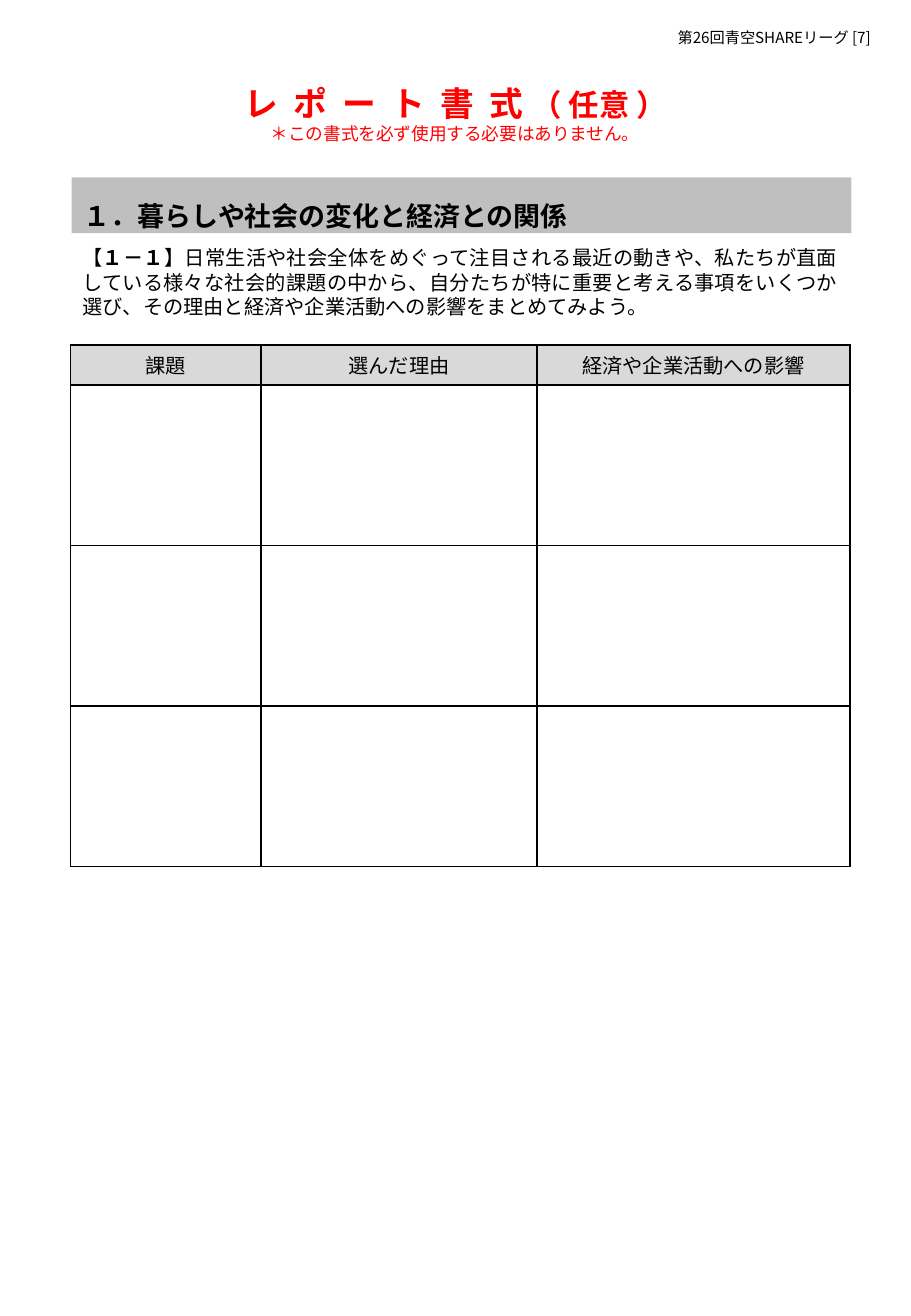
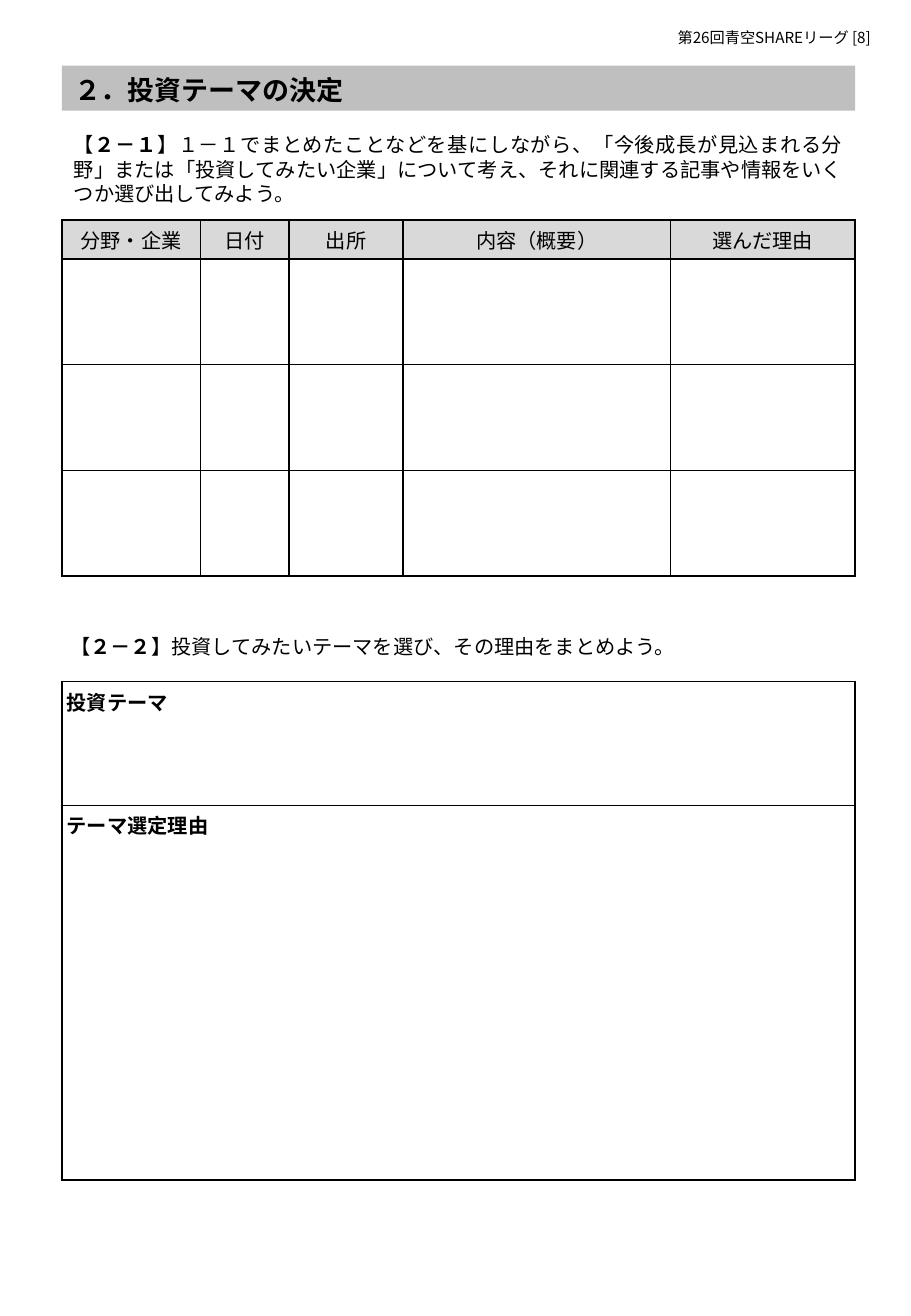
from pptx import Presentation
from pptx.dml.color import RGBColor
from pptx.enum.text import MSO_ANCHOR, MSO_AUTO_SIZE, PP_ALIGN
from pptx.oxml import parse_xml
from pptx.oxml.ns import nsdecls
from pptx.util import Inches, Pt

# Shared look
FONT = "Noto Sans CJK JP"
COLOR = {"ink": "000000", "alert": "FF0000", "band": "BFBFBF", "head": "D9D9D9"}
LEAD = 1.21  # line height per point of text
INSET = 0.04
GAP = "  "  # no-break space and space between the title's letters


def rgb(name):
    return RGBColor.from_string(COLOR[name])


def add_run(para, text, size, bold=False, color="ink"):
    run = para.add_run()
    run.text = text
    for key, value in {"name": FONT, "size": Pt(size), "bold": bold}.items():
        setattr(run.font, key, value)
    run.font.color.rgb = rgb(color)
    run.font._element.append(
        parse_xml(f'<a:ea {nsdecls("a")} typeface="{FONT}"/>'))


def set_frame(frame, anchor=MSO_ANCHOR.TOP):
    style = {"word_wrap": True, "auto_size": MSO_AUTO_SIZE.NONE,
             "vertical_anchor": anchor}
    for key, value in style.items():
        setattr(frame, key, value)


def set_para(para, align, lead):
    para.alignment = align
    para.line_spacing = Pt(round(lead, 1))


def add_box(slide, *rect):
    frame = slide.shapes.add_textbox(*map(Inches, rect)).text_frame
    set_frame(frame)
    return frame


def add_header(slide, page):
    para = add_box(slide, 5.48, 0.18, 2.02, 0.25).paragraphs[0]
    set_para(para, PP_ALIGN.LEFT, 9 * LEAD)
    add_run(para, f"第26回青空SHAREリーグ [{page}]", 9)


def add_band(slide, text, rect, lead):
    """Section heading on a grey band, in the title placeholder."""
    band = slide.shapes.title
    band.left, band.top, band.width, band.height = map(Inches, rect)
    band.fill.solid()
    band.fill.fore_color.rgb = rgb("band")
    set_frame(band.text_frame, MSO_ANCHOR.MIDDLE)
    para = band.text_frame.paragraphs[0]
    set_para(para, PP_ALIGN.LEFT, lead)
    add_run(para, text, 16, True)


def add_task(slide, code, text, *rect):
    para = add_box(slide, *rect).paragraphs[0]
    set_para(para, PP_ALIGN.JUSTIFY, 12 * LEAD)
    add_run(para, "【", 12)
    add_run(para, code, 12, True)
    add_run(para, "】" + text, 12)


def set_cell(cell):
    for side in ("left", "right", "top", "bottom"):
        setattr(cell, f"margin_{side}", Inches(INSET))
    props = cell._tc.get_or_add_tcPr()
    for side in "LRTB":
        props.append(parse_xml(
            f'<a:ln{side} {nsdecls("a")} w="{Pt(1)}"><a:solidFill>'
            f'<a:srgbClr val="{COLOR["ink"]}"/></a:solidFill></a:ln{side}>'))
    cell.fill.background()


def add_grid(slide, left, top, cols, rows):
    """Plain ruled table with the given column widths and row heights."""
    shape = slide.shapes.add_table(
        len(rows), len(cols), *map(Inches, (left, top, sum(cols), sum(rows))))
    grid = shape.table
    grid.first_row = grid.horz_banding = False
    for col, width in zip(grid.columns, cols):
        col.width = Inches(width)
    for row, height in zip(grid.rows, rows):
        row.height = Inches(height)
    for cell in grid.iter_cells():
        set_cell(cell)
    return grid


def add_form(slide, left, top, heads, head, body):
    """Table with grey headings and three rows to fill in."""
    grid = add_grid(slide, left, top, list(heads.values()), [head] + [body] * 3)
    for cell, text in zip(grid.rows[0].cells, heads):
        cell.fill.solid()
        cell.fill.fore_color.rgb = rgb("head")
        cell.vertical_anchor = MSO_ANCHOR.MIDDLE
        para = cell.text_frame.paragraphs[0]
        para.alignment = PP_ALIGN.CENTER
        add_run(para, text, 12)


def add_notes(slide, left, top, width, fields):
    """One-column table with a bold label in each row."""
    grid = add_grid(slide, left, top, [width], list(fields.values()))
    for row, text in zip(grid.rows, fields):
        para = row.cells[0].text_frame.paragraphs[0]
        para.alignment = PP_ALIGN.JUSTIFY
        add_run(para, text, 12, True)


def add_top(slide):
    """Red report title with its remark."""
    frame = add_box(slide, 0.1, 0.45, 7.3, 0.78)
    para = frame.paragraphs[0]
    set_para(para, PP_ALIGN.CENTER, 37)
    add_run(para, GAP.join("レポート書式") + " ", 20, True, "alert")
    add_run(para, "（ 任意 ）", 18, True, "alert")
    para = frame.add_paragraph()
    set_para(para, PP_ALIGN.CENTER, 10.5 * LEAD)
    add_run(para, "＊この書式を必ず使用する必要はありません。", 10.5, color="alert")


def add_page(deck, page):
    slide = deck.slides.add_slide(deck.slide_layouts[5])
    add_header(slide, page)
    return slide


def main():
    deck = Presentation()
    deck.slide_width, deck.slide_height = Inches(7.5), Inches(10.83)

    # Section 1: issues
    slide = add_page(deck, 7)
    add_top(slide)
    add_band(slide, "１．暮らしや社会の変化と経済との関係",
             (0.59, 1.46, 6.42, 0.46), 31)
    add_task(slide, "１－１",
             "日常生活や社会全体をめぐって注目される最近の動きや、私たちが直面"
             "している様々な社会的課題の中から、自分たちが特に重要と考える事項を"
             "いくつか選び、その理由と経済や企業活動への影響をまとめてみよう。",
             0.58, 1.97, 6.42, 0.71)
    add_form(slide, 0.58, 2.84,
             {"課題": 1.57, "選んだ理由": 2.27, "経済や企業活動への影響": 2.58},
             0.33, 1.32)

    # Section 2: investment theme
    slide = add_page(deck, 8)
    add_band(slide, "２．投資テーマの決定", (0.51, 0.54, 6.53, 0.37), 21)
    add_task(slide, "２－１",
             "１－１でまとめたことなどを基にしながら、「今後成長が見込まれる分野」"
             "または「投資してみたい企業」について考え、それに関連する記事や情報を"
             "いくつか選び出してみよう。",
             0.51, 1.04, 6.53, 0.71)
    add_form(slide, 0.51, 1.81,
             {"分野・企業": 1.14, "日付": 0.73, "出所": 0.94,
              "内容（概要）": 2.2, "選んだ理由": 1.52},
             0.31, 0.87)
    add_task(slide, "２－２", "投資してみたいテーマを選び、その理由をまとめよう。",
             0.48, 5.17, 6.53, 0.3)
    add_notes(slide, 0.51, 5.61, 6.53, {"投資テーマ": 1.02, "テーマ選定理由": 3.08})

    deck.save("out.pptx")


if __name__ == "__main__":
    main()
